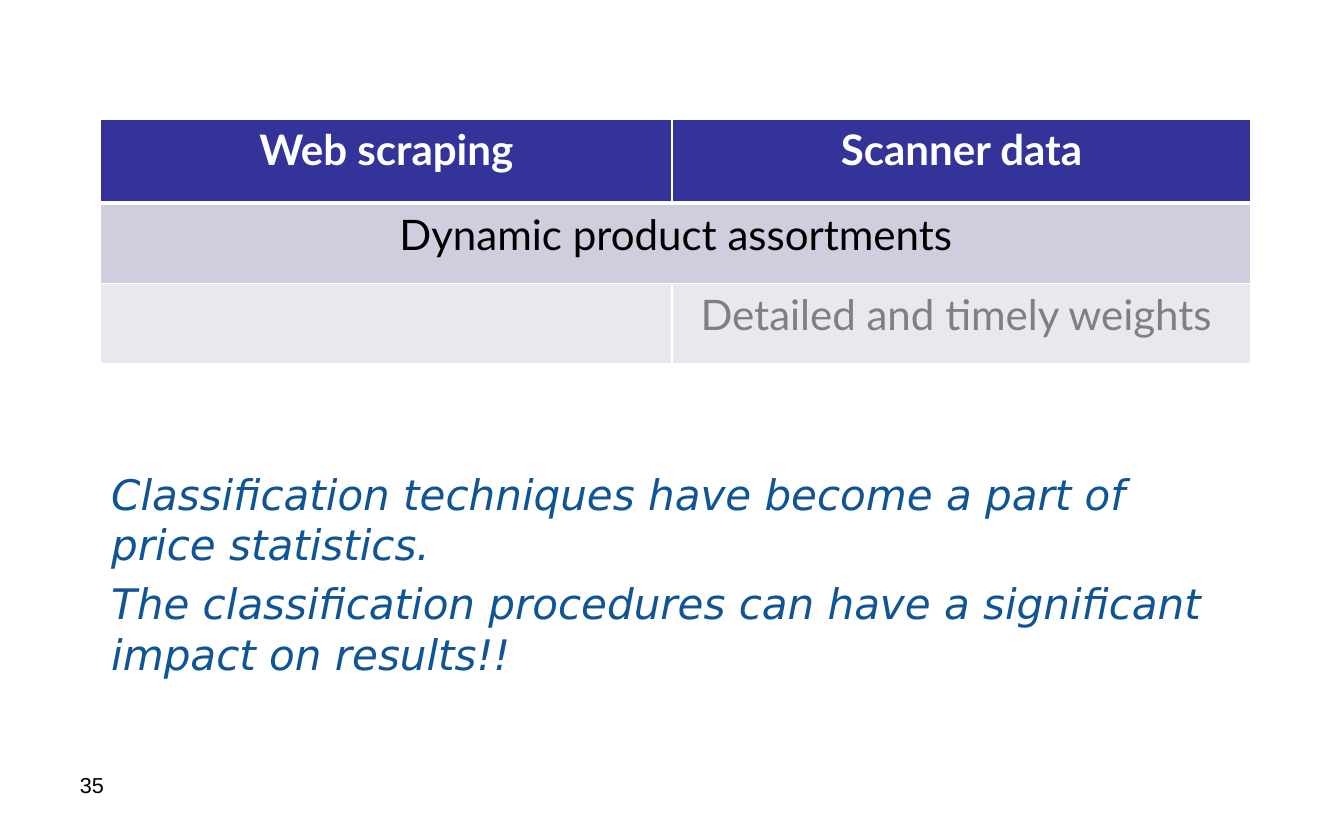
import dataclasses

import lxml.etree
import pptx
import pptx.dml.color
import pptx.enum.text
import pptx.oxml.ns
import pptx.util

PX = 9144
WHITE, BLACK, GREY = "FFFFFF", "000000", "808080"
NAVY, LAVENDER, PALE, BLUE = "333399", "CECEDE", "E8E8EF", "0F5494"


@dataclasses.dataclass(frozen=True)
class Style:
    font: str
    size: float
    color: str
    bold: bool = False
    italic: bool = False


@dataclasses.dataclass(frozen=True)
class TextBlock:
    left: int
    top: int
    width: int
    height: int
    lines: tuple[str, ...]
    style: Style
    inset_top: int = 5
    space_before: float = 0


@dataclasses.dataclass(frozen=True)
class TableRow:
    height: int
    texts: tuple[str, ...]
    fill: str
    style: Style
    top_line: int = 1
    bottom_line: int = 1


TABLE_LEFT, TABLE_TOP = 93, 110
COLUMN_WIDTHS = (528, 535)
ROWS = (
    TableRow(78, ("Web scraping", "Scanner data"), NAVY,
             Style("Lato", 28, WHITE, bold=True), bottom_line=3),
    TableRow(74, ("Dynamic product assortments",), LAVENDER,
             Style("Lato", 28, BLACK), top_line=3),
    TableRow(74, ("", "Detailed and timely weights "), PALE,
             Style("Lato", 28, GREY)),
)
BLOCKS = (
    TextBlock(64, 709, 290, 54, ("35",), Style("Arial", 14.4, BLACK)),
    TextBlock(93, 425, 1064, 206,
              ("Classification techniques have become a part of price statistics.",
               "The classification procedures can have a significant impact on results!!"),
              Style("DejaVu Sans", 28, BLUE, italic=True), inset_top=8, space_before=5.6),
)


def px(length: int) -> pptx.util.Emu:
    """Turn pixels into EMU."""
    return pptx.util.Emu(length * PX)


def rgb(color: str) -> pptx.dml.color.RGBColor:
    """Turn a hex string into a colour."""
    return pptx.dml.color.RGBColor.from_string(color)


def format_para(para, style: Style) -> None:
    """Apply a text style to every run of a paragraph."""
    for span in para.runs:
        span.font.name = style.font
        span.font.size = pptx.util.Pt(style.size)
        span.font.bold = style.bold
        span.font.italic = style.italic
        span.font.color.rgb = rgb(style.color)


def draw_block(page, block: TextBlock) -> None:
    """Draw a wrapped text box with its paragraphs."""
    box = page.shapes.add_textbox(px(block.left), px(block.top),
                                  px(block.width), px(block.height))
    frame = box.text_frame
    frame.word_wrap = True
    frame.margin_top = px(block.inset_top)
    frame.text = "\n".join(block.lines)
    for index, para in enumerate(frame.paragraphs):
        if index:
            para.space_before = pptx.util.Pt(block.space_before)
        format_para(para, block.style)


def add_borders(cell, row: TableRow) -> None:
    """Give a cell white borders on all four sides."""
    properties = cell._tc.get_or_add_tcPr()
    widths = {"L": 1, "R": 1, "T": row.top_line, "B": row.bottom_line}
    for side, width in widths.items():
        line = lxml.etree.SubElement(properties, pptx.oxml.ns.qn(f"a:ln{side}"),
                                     w=str(pptx.util.Pt(width)))
        solid = lxml.etree.SubElement(line, pptx.oxml.ns.qn("a:solidFill"))
        lxml.etree.SubElement(solid, pptx.oxml.ns.qn("a:srgbClr"), val=WHITE)


def draw_table(page) -> None:
    """Draw the comparison table, merging rows that hold a single text."""
    frame = page.shapes.add_table(
        len(ROWS), len(COLUMN_WIDTHS), px(TABLE_LEFT), px(TABLE_TOP),
        px(sum(COLUMN_WIDTHS)), px(sum(row.height for row in ROWS)))
    table = frame.table
    table.first_row = False
    table.horz_banding = False
    for column, width in zip(table.columns, COLUMN_WIDTHS):
        column.width = px(width)
    for index, row in enumerate(ROWS):
        table.rows[index].height = px(row.height)
        cells = list(table.rows[index].cells)
        for cell in cells:
            add_borders(cell, row)
            cell.fill.solid()
            cell.fill.fore_color.rgb = rgb(row.fill)
        if len(row.texts) == 1:
            cells[0].merge(cells[-1])
        for cell, text in zip(cells, row.texts):
            para = cell.text_frame.paragraphs[0]
            para.text = text
            para.alignment = pptx.enum.text.PP_ALIGN.CENTER
            format_para(para, row.style)


def main() -> None:
    """Build the slide and save it."""
    deck = pptx.Presentation()
    deck.slide_width, deck.slide_height = px(1242), px(772)
    page = deck.slides.add_slide(deck.slide_layouts[6])
    draw_table(page)
    for block in BLOCKS:
        draw_block(page, block)
    deck.save("out.pptx")


if __name__ == "__main__":
    main()
